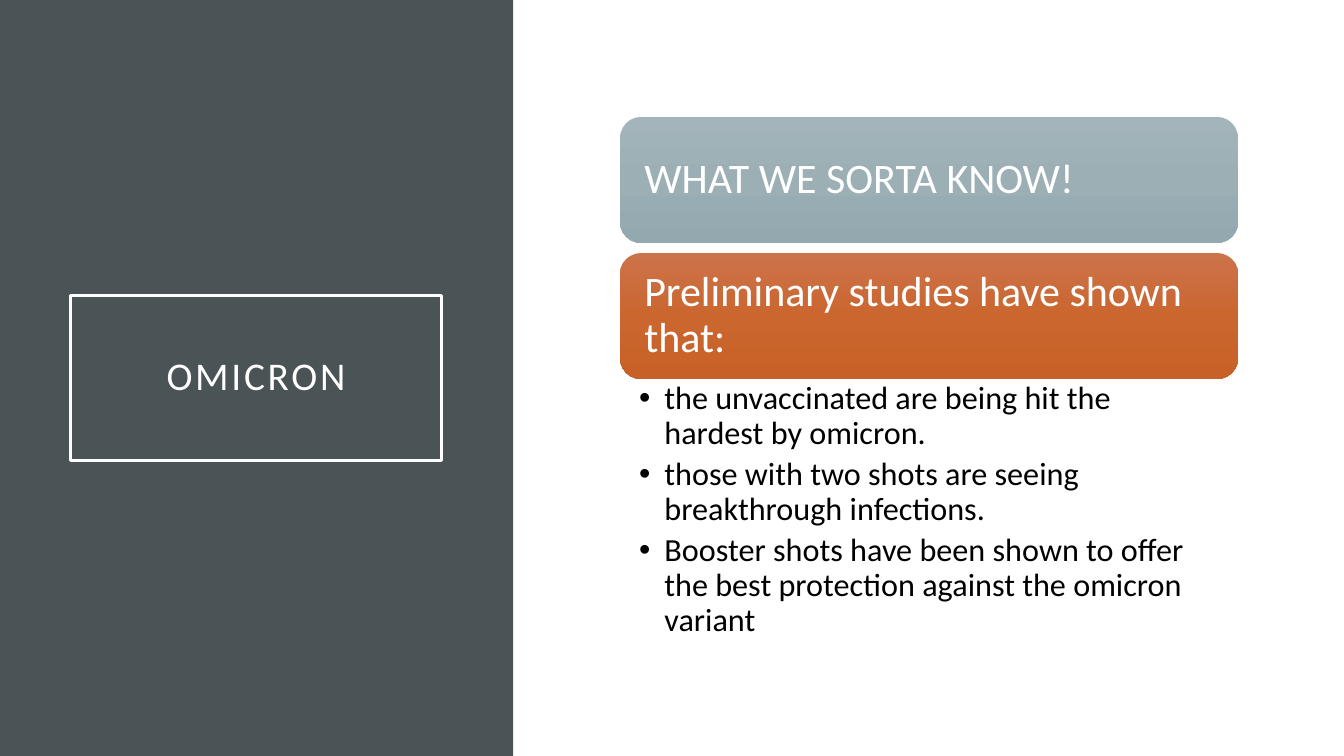
from dataclasses import dataclass

from lxml import etree
from pptx import Presentation
from pptx.dml.color import RGBColor
from pptx.enum.shapes import MSO_SHAPE
from pptx.enum.text import MSO_ANCHOR, MSO_AUTO_SIZE, PP_ALIGN
from pptx.oxml.ns import qn
from pptx.util import Inches, Pt

RECTANGLE = MSO_SHAPE.RECTANGLE
ROUNDED = MSO_SHAPE.ROUNDED_RECTANGLE
MIDDLE = MSO_ANCHOR.MIDDLE
TOP = MSO_ANCHOR.TOP
LEFT = PP_ALIGN.LEFT
CENTER = PP_ALIGN.CENTER
NO_AUTOFIT = MSO_AUTO_SIZE.NONE

FONT = "Calibri"
COLORS = {"panel": "4A5356", "white": "FFFFFF", "black": "000000"}
LIST_LEFT, LIST_WIDTH = 6.15, 6.13
HEADING_TOP, HEADING_HEIGHT, HEADING_PITCH = 1.16, 1.25, 1.35


@dataclass
class Heading:
    text: str
    gradient: tuple[str, str, str]


HEADINGS = [
    Heading("WHAT WE SORTA KNOW!", ("A3B5BB", "9BAFB5", "93A9AF")),
    Heading("Preliminary studies have shown that:", ("CC734B", "CB662F", "C86128")),
]
FINDINGS = [
    "the unvaccinated are being hit the hardest by omicron.",
    "those with two shots are seeing breakthrough infections.",
    "Booster shots have been shown to offer the best protection against the omicron variant",
]


def rgb(name: str) -> RGBColor:
    return RGBColor.from_string(COLORS[name])


def set_frame(frame, margins: tuple[float, float, float, float], anchor) -> None:
    """Set wrapping, anchor and the left, top, right and bottom margins."""
    frame.word_wrap = True
    frame.auto_size = NO_AUTOFIT
    frame.vertical_anchor = anchor
    (frame.margin_left, frame.margin_top,
     frame.margin_right, frame.margin_bottom) = map(Inches, margins)


def format_paragraph(paragraph, size: float, color: str, align=LEFT) -> None:
    paragraph.alignment = align
    paragraph.line_spacing = 0.9
    paragraph.font.name = FONT
    paragraph.font.size = Pt(size)
    paragraph.font.color.rgb = rgb(color)


def fill_downwards(shape, colors: tuple[str, ...]) -> None:
    """Fill with evenly spaced gradient stops from top to bottom."""
    shape.fill.gradient()
    shape.fill.gradient_angle = 270
    stops = shape.element.spPr.find(qn("a:gradFill")).find(qn("a:gsLst"))
    for stop in list(stops):
        stops.remove(stop)
    for index, color in enumerate(colors):
        position = 100000 * index // (len(colors) - 1)
        stop = etree.SubElement(stops, qn("a:gs"), pos=str(position))
        etree.SubElement(stop, qn("a:srgbClr"), val=color)


def add_bullet(paragraph) -> None:
    properties = paragraph._p.get_or_add_pPr()
    indent = Inches(0.25)
    properties.set("marL", str(indent))
    properties.set("indent", str(-indent))
    etree.SubElement(properties, qn("a:buFont"), typeface="Arial")
    etree.SubElement(properties, qn("a:buChar"), char="•")


def add_panel(slide) -> None:
    panel = slide.shapes.add_shape(RECTANGLE, 0, 0, Inches(5.09), Inches(7.5))
    panel.shadow.inherit = False
    panel.fill.solid()
    panel.fill.fore_color.rgb = rgb("panel")
    panel.line.fill.background()


def place_title(slide) -> None:
    """Format the title and bring it in front of the panel."""
    title = slide.shapes.title
    title.left, title.top = Inches(0.7), Inches(2.93)
    title.width, title.height = Inches(3.68), Inches(1.64)
    title.line.color.rgb = rgb("white")
    title.line.width = Pt(2.5)
    set_frame(title.text_frame, (0.2, 0.2, 0.2, 0.2), MIDDLE)
    paragraph = title.text_frame.paragraphs[0]
    run = paragraph.add_run()
    run.text = "OMICRON"
    run.font._element.set("spc", "200")
    format_paragraph(paragraph, 28, "white", CENTER)
    title.element.getparent().append(title.element)


def add_heading(slide, heading: Heading, top: float) -> None:
    bar = slide.shapes.add_shape(
        ROUNDED, Inches(LIST_LEFT), Inches(top), Inches(LIST_WIDTH), Inches(HEADING_HEIGHT))
    bar.shadow.inherit = False
    fill_downwards(bar, heading.gradient)
    bar.line.fill.background()
    set_frame(bar.text_frame, (0.18, 0.18, 0.18, 0.18), MIDDLE)
    bar.text_frame.text = heading.text
    format_paragraph(bar.text_frame.paragraphs[0], 30, "white")


def add_findings(slide) -> None:
    findings = slide.shapes.add_textbox(
        Inches(LIST_LEFT), Inches(3.75), Inches(LIST_WIDTH), Inches(2.58))
    set_frame(findings.text_frame, (0.19, 0.04, 0.23, 0.04), TOP)
    findings.text_frame.text = "\n".join(FINDINGS)
    for paragraph in findings.text_frame.paragraphs:
        format_paragraph(paragraph, 23, "black")
        paragraph.space_after = Pt(4.6)
        add_bullet(paragraph)


def main() -> None:
    presentation = Presentation()
    presentation.slide_width, presentation.slide_height = Inches(13.33), Inches(7.5)
    slide = presentation.slides.add_slide(presentation.slide_layouts.get_by_name("Title Only"))
    add_panel(slide)
    place_title(slide)
    for index, heading in enumerate(HEADINGS):
        add_heading(slide, heading, HEADING_TOP + index * HEADING_PITCH)
    add_findings(slide)
    presentation.save("out.pptx")


if __name__ == "__main__":
    main()
